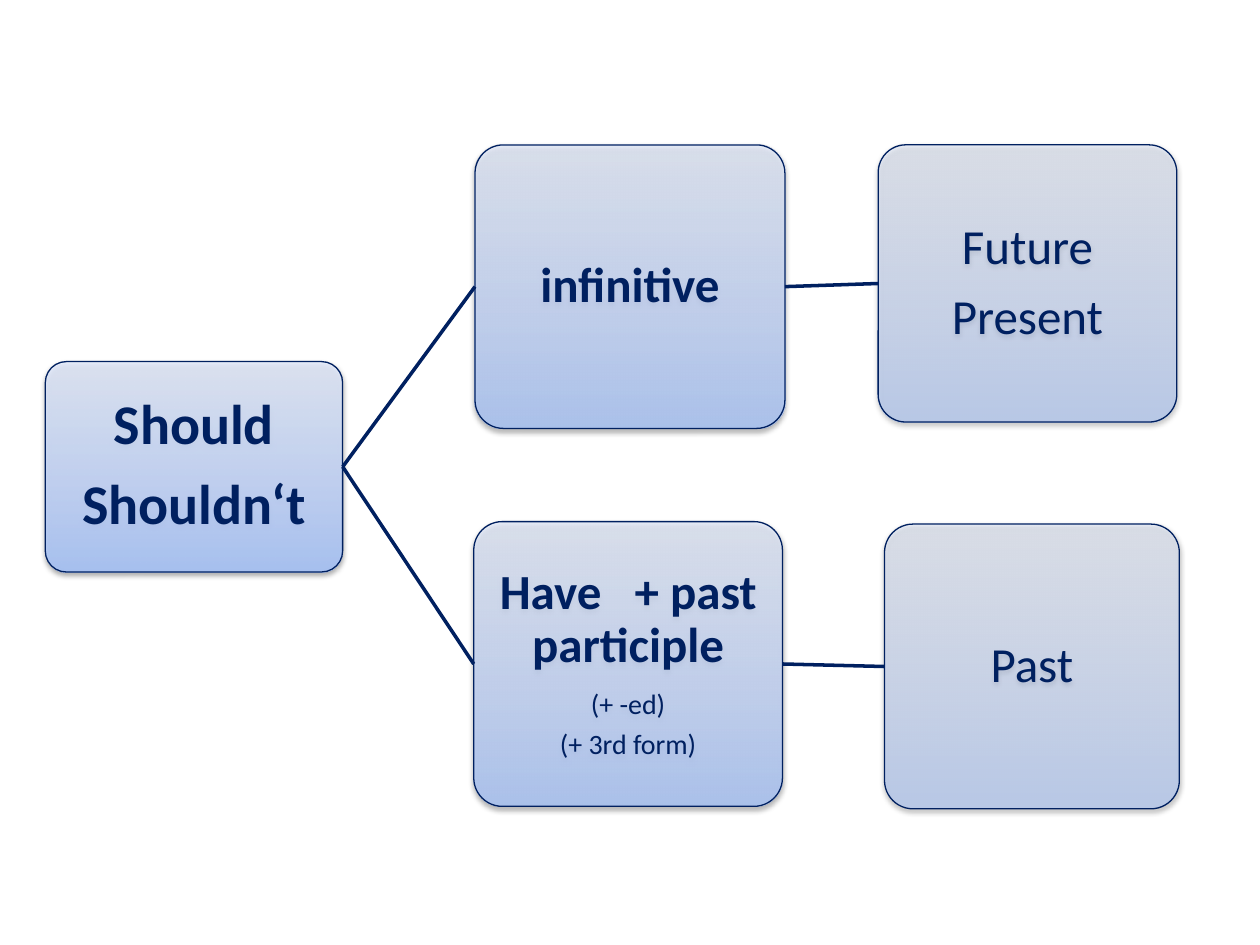
from pptx import Presentation
from pptx.dml.color import RGBColor
from pptx.enum.shapes import MSO_CONNECTOR, MSO_SHAPE
from pptx.enum.text import MSO_ANCHOR, PP_ALIGN
from pptx.oxml import parse_xml
from pptx.oxml.ns import nsdecls
from pptx.util import Inches, Pt
from lxml.etree import SubElement

HEX = {"navy": "002060", "low": "A4C4FF", "mid": "BFD4FF", "top": "E6EEFF", "shade": "000000"}
NAVY = RGBColor.from_string(HEX["navy"])
STOPS = [(0, "low"), (35, "mid"), (100, "top")]

prs = Presentation()
prs.slide_width, prs.slide_height = Inches(10), Inches(7.5)
slide = prs.slides.add_slide(prs.slide_layouts[6])


def paint(box, alpha):
    """Fill with a translucent upward gradient and cast a soft shadow."""
    stops = "".join(
        f'<a:gs pos="{pos * 1000}"><a:srgbClr val="{HEX[name]}">'
        f'<a:alpha val="{alpha * 1000}"/></a:srgbClr></a:gs>'
        for pos, name in STOPS)
    props = box._element.spPr
    props.insert(2, parse_xml(
        f'<a:gradFill {nsdecls("a")} rotWithShape="1"><a:gsLst>{stops}</a:gsLst>'
        '<a:lin ang="16200000" scaled="0"/></a:gradFill>'))
    box.shadow.inherit = False
    props.effectLst.append(parse_xml(
        f'<a:outerShdw {nsdecls("a")} blurRad="{Pt(3.1)}" dist="{Pt(1.6)}" dir="5400000" '
        f'rotWithShape="0"><a:srgbClr val="{HEX["shade"]}"><a:alpha val="38000"/>'
        '</a:srgbClr></a:outerShdw>'))


# Boxes: name, place, opacity, lines of (text, size, bold)
BOXES = [
    ("modal", (0.36, 2.87, 2.36, 1.67), 80, [("Should", 32, True), ("Shouldn‘t", 32, True)]),
    ("verb", (3.77, 1.15, 2.46, 2.25), 70, [("infinitive", 28, True)]),
    ("now", (6.97, 1.15, 2.37, 2.2), 50, [("Future", 28, False), ("Present", 28, False)]),
    ("have", (3.76, 4.14, 2.45, 2.26), 70, [("Have   + past participle", 28, True),
                                            ("(+ -ed)", 16, False),
                                            ("(+ 3rd form)", 16, False)]),
    ("past", (7.02, 4.16, 2.34, 2.26), 50, [("Past", 28, False)]),
]
nodes = {}
for name, place, alpha, lines in BOXES:
    box = slide.shapes.add_shape(MSO_SHAPE.ROUNDED_RECTANGLE, *map(Inches, place))
    box.adjustments[0] = 0.1
    paint(box, alpha)
    box.line.color.rgb = NAVY
    box.line.width = Pt(0.75)
    nodes[name] = box

    frame = box.text_frame
    frame.word_wrap = True
    frame.vertical_anchor = MSO_ANCHOR.MIDDLE
    frame.margin_left = frame.margin_right = Inches(0.02)
    frame.margin_top = frame.margin_bottom = Inches(0.02)
    for i, (text, size, bold) in enumerate(lines):
        para = frame.add_paragraph() if i else frame.paragraphs[0]
        para.text = text
        para.alignment = PP_ALIGN.CENTER
        para.line_spacing = 0.9
        para.space_after = Pt(round(size * 0.35, 1))
        para.font.name = "Calibri"
        para.font.size = Pt(size)
        para.font.bold = bold
        para.font.color.rgb = NAVY

# Branches, from right side to left side
for start, end in [("modal", "verb"), ("verb", "now"), ("modal", "have"), ("have", "past")]:
    link = slide.shapes.add_connector(MSO_CONNECTOR.STRAIGHT, 0, 0, 0, 0)
    link.begin_connect(nodes[start], 3)
    link.end_connect(nodes[end], 1)
    link.line.color.rgb = NAVY
    link.line.width = Pt(2)
    SubElement(link._element.spPr,
               "{http://schemas.openxmlformats.org/drawingml/2006/main}effectLst")

prs.save("out.pptx")
